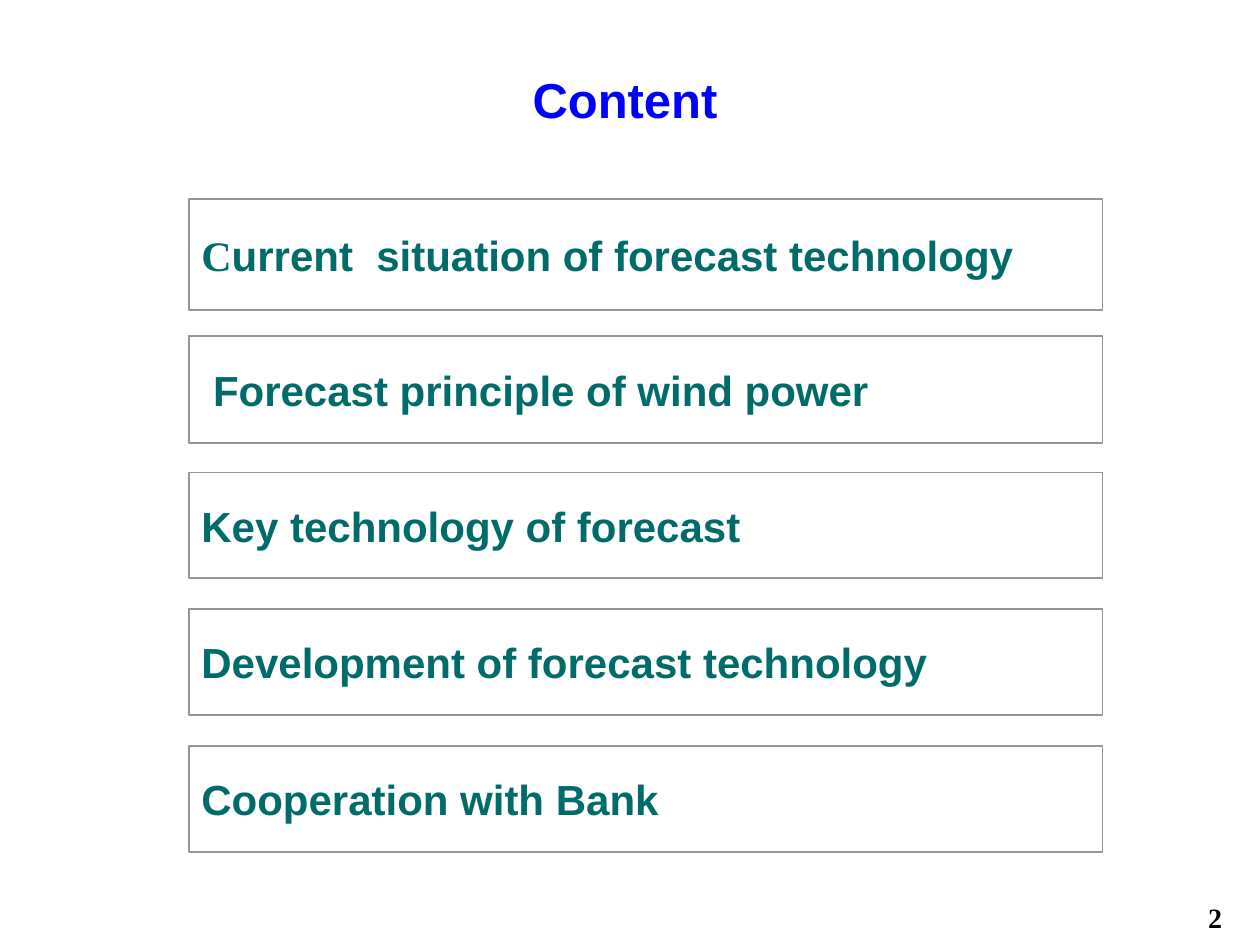
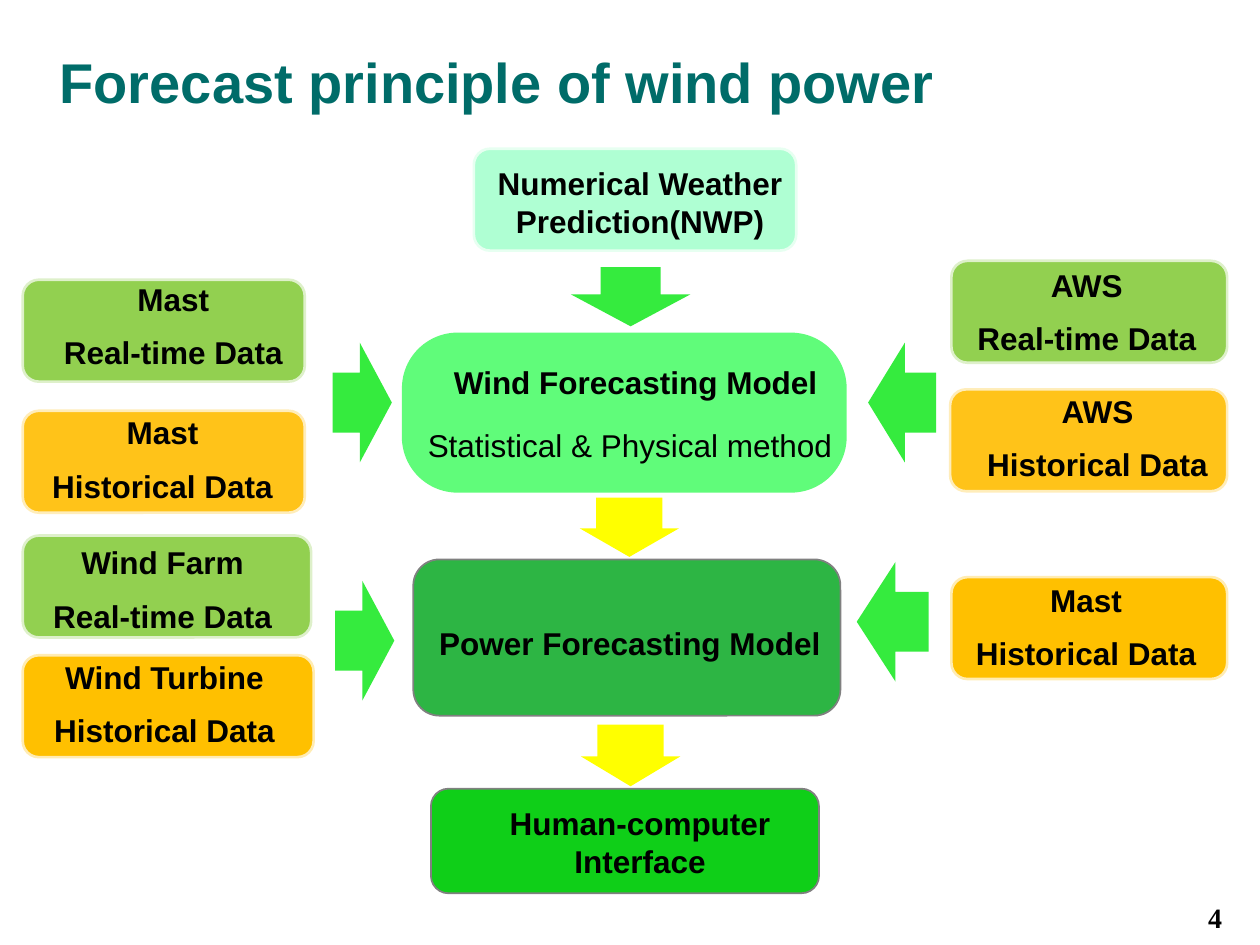
from lxml import etree
from pptx import Presentation
from pptx.dml.color import RGBColor
from pptx.enum.shapes import MSO_SHAPE
from pptx.enum.text import MSO_ANCHOR, MSO_AUTO_SIZE, PP_ALIGN
from pptx.oxml.ns import qn
from pptx.util import Inches, Pt

RECT, ROUND = MSO_SHAPE.RECTANGLE, MSO_SHAPE.ROUNDED_RECTANGLE
DOWN, LEFT, RIGHT = MSO_SHAPE.DOWN_ARROW, MSO_SHAPE.LEFT_ARROW, MSO_SHAPE.RIGHT_ARROW
CENTER, START = PP_ALIGN.CENTER, PP_ALIGN.LEFT
TOP, MIDDLE = MSO_ANCHOR.TOP, MSO_ANCHOR.MIDDLE
FIXED = MSO_AUTO_SIZE.NONE

BLACK = RGBColor(0x00, 0x00, 0x00)
WHITE = RGBColor(0xFF, 0xFF, 0xFF)
BLUE = RGBColor(0x00, 0x00, 0xFF)
TEAL = RGBColor(0x00, 0x6C, 0x69)
SILVER = RGBColor(0x95, 0x95, 0x95)
GRAY = RGBColor(0x80, 0x80, 0x80)
LIME = RGBColor(0x92, 0xD0, 0x50)
AMBER = RGBColor(0xFF, 0xC3, 0x19)
GOLD = RGBColor(0xFF, 0xC0, 0x00)
MINT = RGBColor(0xAF, 0xFF, 0xD3)
SPRING = RGBColor(0x60, 0xFC, 0x7A)
FOREST = RGBColor(0x2D, 0xB5, 0x44)
GRASS = RGBColor(0x0F, 0xCF, 0x18)
GREEN = RGBColor(0x35, 0xEB, 0x3E)
YELLOW = RGBColor(0xFF, 0xFF, 0x00)

TITLE = {"name": "Arial", "bold": True}
ITEM = {"name": "Arial", "size": Pt(24), "bold": True, "color": TEAL}
LABEL = {"name": "Arial", "size": Pt(18), "bold": True, "color": BLACK}
PLAIN = LABEL | {"bold": False}
PAGE = {"name": "Times New Roman", "size": Pt(16), "bold": True, "color": BLACK}


def write(frame, lines, style, align=START, anchor=TOP, wrap=True):
    """Fill a text frame; each line is a string or a list of (text, style) runs."""
    frame.word_wrap = wrap
    frame.auto_size = FIXED
    frame.vertical_anchor = anchor
    for i, line in enumerate(lines):
        para = frame.paragraphs[0] if i == 0 else frame.add_paragraph()
        para.alignment = align
        para.space_before = Pt(9 if i else 0)
        for text, look in [(line, style)] if isinstance(line, str) else line:
            run = para.add_run()
            run.text = text
            for key, value in look.items():
                if key == "color":
                    run.font.color.rgb = value
                else:
                    setattr(run.font, key, value)


def draw(slide, kind, place, fill=None, line=None, width=1, adj=()):
    shape = slide.shapes.add_shape(kind, *map(Inches, place))
    shape.shadow.inherit = False
    if fill is None:
        shape.fill.background()
    else:
        shape.fill.solid()
        shape.fill.fore_color.rgb = fill
    if line is None:
        shape.line.fill.background()
    else:
        shape.line.color.rgb = line
        shape.line.width = Pt(width)
    for i, value in enumerate(adj):
        shape.adjustments[i] = value
    return shape


deck = Presentation()
deck.slide_width, deck.slide_height = Inches(10), Inches(7.5)

# Titles and page numbers
heads = [
    ("Content", (0.42, 0.5, 9.08, 0.57), 28, BLUE, CENTER, "2"),
    (" Forecast principle of wind power", (0.25, 0.33, 9.67, 0.64), 32, TEAL, START, "4"),
]
slides = []
for text, place, size, color, align, page in heads:
    slide = deck.slides.add_slide(deck.slide_layouts[5])
    title = slide.shapes.title
    title.left, title.top, title.width, title.height = map(Inches, place)
    write(title.text_frame, [text], TITLE | {"size": Pt(size), "color": color}, align)
    box = slide.shapes.add_textbox(*map(Inches, (9.49, 7.1, 0.46, 0.37)))
    write(box.text_frame, [page], PAGE, wrap=False)
    slides.append(slide)
agenda, flow = slides

# Agenda boxes
items = [
    ([("C", ITEM | {"name": "Times New Roman"}),
      ("urrent  situation of forecast technology", ITEM)], 0.88),
    (" Forecast principle of wind power", 0.85),
    ("Key technology of forecast", 0.84),
    ("Development of forecast technology", 0.84),
    ("Cooperation with Bank", 0.84),
]
step = (5.92 - 1.58) / 4
for i, (text, height) in enumerate(items):
    box = draw(agenda, RECT, (1.5, 1.58 + i * step, 7.25, height), line=SILVER)
    write(box.text_frame, [text], ITEM, anchor=MIDDLE)

# Data sources with a translucent white edge
sources = [
    ((3.75, 1.17, 2.58), MINT),
    ((0.17, 2.21, 2.26), LIME),
    ((0.17, 3.25, 2.26), AMBER),
    ((0.17, 4.24, 2.31), LIME),
    ((0.17, 5.19, 2.33), GOLD),
    ((7.54, 2.06, 2.21), LIME),
    ((7.53, 3.08, 2.22), AMBER),
    ((7.54, 4.57, 2.21), GOLD),
]
for place, fill in sources:
    box = draw(flow, ROUND, (*place, 0.83), fill, WHITE, 3, [0.167])
    tint = box.element.find(".//" + qn("a:ln")).find(".//" + qn("a:srgbClr"))
    etree.SubElement(tint, qn("a:alpha"), val="70000")

# Models and output
draw(flow, ROUND, (3.19, 2.64, 3.53, 1.27), SPRING, adj=[0.348])
draw(flow, ROUND, (3.28, 4.44, 3.39, 1.24), FOREST, GRAY, adj=[0.167])
draw(flow, ROUND, (3.42, 6.26, 3.08, 0.83), GRASS, GRAY, adj=[0.167])

# Arrows
side, fall = (0.501, 0.54), (0.666, 0.483)
arrows = [
    (DOWN, (4.53, 2.12, 0.95, 0.47), GREEN, side),
    (RIGHT, (2.64, 2.72, 0.47, 0.95), GREEN, side),
    (LEFT, (6.89, 2.72, 0.54, 0.95), GREEN, side),
    (RIGHT, (2.66, 4.61, 0.47, 0.95), GREEN, side),
    (LEFT, (6.8, 4.46, 0.57, 0.95), GREEN, side),
    (DOWN, (4.6, 3.95, 0.79, 0.47), YELLOW, fall),
    (DOWN, (4.61, 5.75, 0.79, 0.49), YELLOW, fall),
]
for kind, place, fill, adj in arrows:
    draw(flow, kind, place, fill, adj=adj)

# Labels
live, past = "Real-time Data", "Historical Data"
labels = [
    ((3.83, 1.25, 2.5, 0.71), ["Numerical Weather Prediction(NWP)"], LABEL),
    ((3.42, 2.83, 3.25, 0.4), ["Wind Forecasting Model"], LABEL),
    ((3.17, 3.33, 3.66, 0.4), ["Statistical & Physical method"], PLAIN),
    ((3.25, 4.9, 3.5, 0.4), ["Power Forecasting Model"], LABEL),
    ((3.75, 6.33, 2.66, 0.71), ["Human-computer Interface"], LABEL),
    ((0.25, 2.17, 2.25, 0.86), ["Mast", live], LABEL),
    ((0.25, 3.23, 2.08, 0.86), ["Mast", past], LABEL),
    ((0.25, 4.26, 2.08, 0.91), ["Wind Farm", live], LABEL),
    ((0.33, 5.17, 1.95, 0.86), ["Wind Turbine", past], LABEL),
    ((7.5, 2.06, 2.25, 0.86), ["AWS", live], LABEL),
    ((7.67, 3.06, 2.08, 0.86), ["AWS", past], LABEL),
    ((7.58, 4.56, 2.08, 0.86), ["Mast", past], LABEL),
]
for place, lines, style in labels:
    box = flow.shapes.add_textbox(*map(Inches, place))
    write(box.text_frame, lines, style, CENTER)

deck.save("out.pptx")
